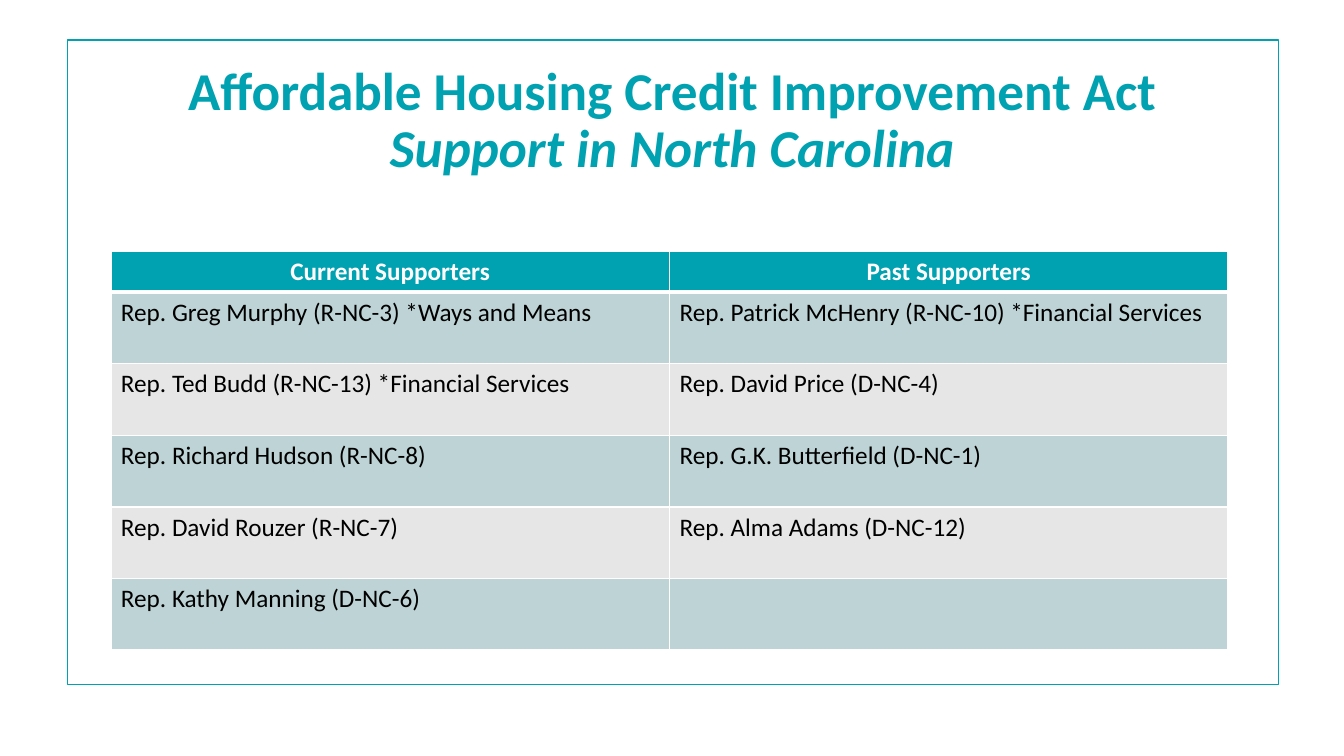
from dataclasses import dataclass

from lxml.etree import SubElement
from pptx import Presentation
from pptx.dml.color import RGBColor as Color
from pptx.enum.shapes import MSO_SHAPE as Shape
from pptx.enum.text import MSO_ANCHOR as Anchor, PP_ALIGN as Align
from pptx.oxml.ns import qn
from pptx.util import Inches, Pt


@dataclass(frozen=True)
class Theme:
    font: str = "Calibri"
    teal: str = "00A1B1"
    band_odd: str = "BDD3D5"
    band_even: str = "E7E6E6"
    white: str = "FFFFFF"
    black: str = "000000"
    title_size: float = 38
    table_size: float = 18
    frame_line: float = 1.25
    cell_line: float = 1
    header_line: float = 3


THEME = Theme()
SLIDE_SIZE = (13.33, 7.5)

# Boxes: left, top, width, height in inches
FRAME_BOX = (0.67, 0.4, 12.01, 6.39)
TITLE_BOX = (0.92, 0.59, 11.5, 1.04)
TABLE_BOX = (1.1, 2.49, 11.08, 3.96)
HEADER_HEIGHT = 0.41

TITLE_LINES = (
    ("Affordable Housing Credit Improvement Act", False),
    ("Support in North Carolina", True),
)
SUPPORTERS = (
    ("Current Supporters", "Past Supporters"),
    ("Rep. Greg Murphy (R-NC-3) *Ways and Means",
     "Rep. Patrick McHenry (R-NC-10) *Financial Services"),
    ("Rep. Ted Budd (R-NC-13) *Financial Services", "Rep. David Price (D-NC-4)"),
    ("Rep. Richard Hudson (R-NC-8)", "Rep. G.K. Butterfield (D-NC-1)"),
    ("Rep. David Rouzer (R-NC-7)", "Rep. Alma Adams (D-NC-12)"),
    ("Rep. Kathy Manning (D-NC-6)", ""),
)


def set_format(target, values):
    for name, value in values.items():
        setattr(target, name, value)


def add_span(para, text, size, color, **styles):
    span = para.add_run()
    span.text = text
    set_format(span.font, {"name": THEME.font, "size": Pt(size), **styles})
    span.font.color.rgb = Color.from_string(color)


def add_frame(slide, box):
    frame = slide.shapes.add_shape(Shape.RECTANGLE, *map(Inches, box))
    frame.shadow.inherit = False
    frame.fill.background()
    frame.line.color.rgb = Color.from_string(THEME.teal)
    frame.line.width = Pt(THEME.frame_line)


def fill_title(slide, box):
    title = slide.shapes.title
    set_format(title, dict(zip(("left", "top", "width", "height"), map(Inches, box))))
    set_format(title.text_frame, {"word_wrap": True, "vertical_anchor": Anchor.TOP})
    para = title.text_frame.paragraphs[0]
    set_format(para, {"alignment": Align.CENTER, "line_spacing": 0.9})
    for number, (text, italic) in enumerate(TITLE_LINES):
        if number:
            para.add_line_break()
        add_span(para, text, THEME.title_size, THEME.teal, bold=True, italic=italic)


def set_borders(cell, widths):
    """Draw white borders; they must precede the fill in the cell properties."""
    properties = cell._tc.get_or_add_tcPr()
    for position, (side, width) in enumerate(widths.items()):
        line = SubElement(properties, qn(f"a:ln{side}"), w=str(Pt(width)))
        fill = SubElement(line, qn("a:solidFill"))
        SubElement(fill, qn("a:srgbClr"), val=THEME.white)
        properties.insert(position, line)


def fill_cell(cell, text, row):
    header = row == 0
    band = THEME.band_odd if row % 2 else THEME.band_even
    cell.fill.solid()
    cell.fill.fore_color.rgb = Color.from_string(THEME.teal if header else band)
    top = THEME.header_line if row == 1 else THEME.cell_line
    bottom = THEME.header_line if header else THEME.cell_line
    set_borders(cell, {"L": THEME.cell_line, "R": THEME.cell_line, "T": top, "B": bottom})
    para = cell.text_frame.paragraphs[0]
    para.alignment = Align.CENTER if header else Align.LEFT
    if text:
        color = THEME.white if header else THEME.black
        add_span(para, text, THEME.table_size, color, bold=header)


def add_supporters(slide, box):
    rows, columns = len(SUPPORTERS), len(SUPPORTERS[0])
    table = slide.shapes.add_table(rows, columns, *map(Inches, box)).table
    for column in table.columns:
        column.width = Inches(box[2] / columns)
    body_height = (box[3] - HEADER_HEIGHT) / (rows - 1)
    for row, texts in enumerate(SUPPORTERS):
        table.rows[row].height = Inches(body_height if row else HEADER_HEIGHT)
        for column, text in enumerate(texts):
            fill_cell(table.cell(row, column), text, row)


def main():
    deck = Presentation()
    deck.slide_width, deck.slide_height = map(Inches, SLIDE_SIZE)
    slide = deck.slides.add_slide(deck.slide_layouts[5])  # Title Only
    # Frame, heading and table
    add_frame(slide, FRAME_BOX)
    fill_title(slide, TITLE_BOX)
    add_supporters(slide, TABLE_BOX)
    deck.save("out.pptx")


if __name__ == "__main__":
    main()
